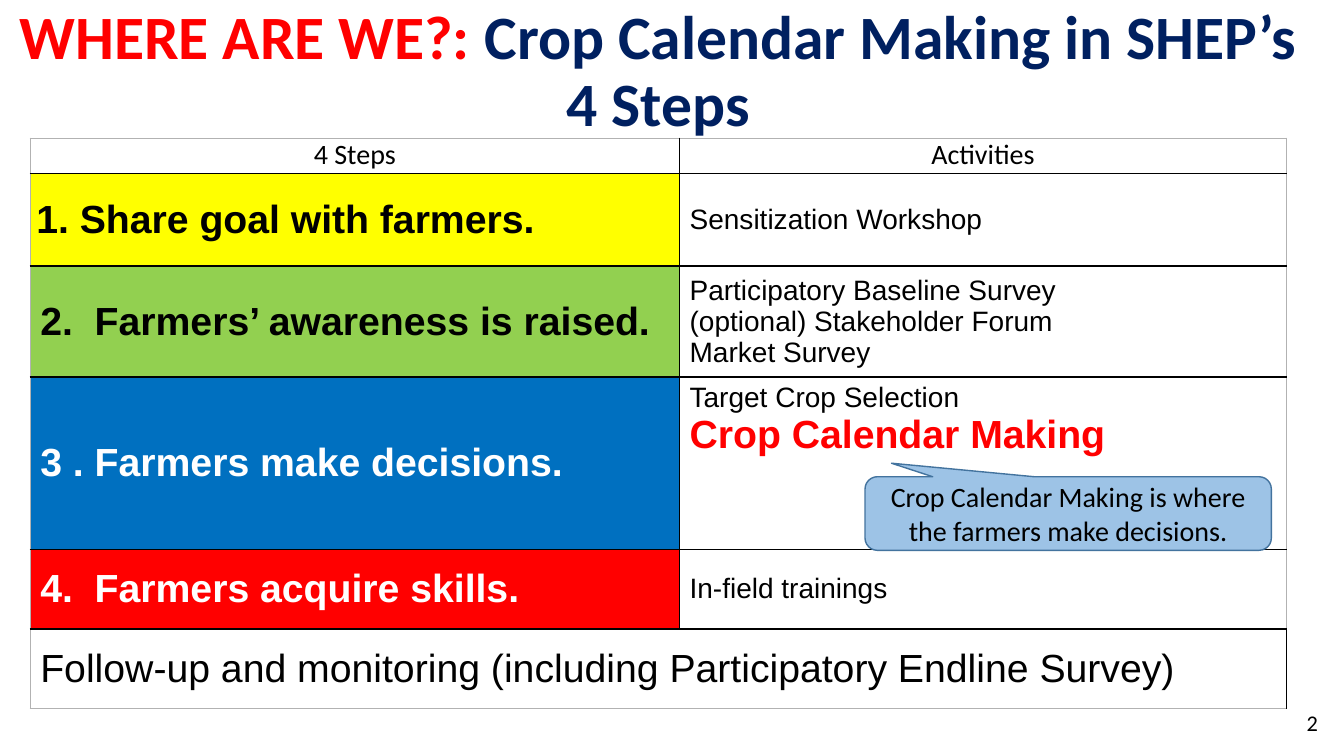
"""Builds the slide that places crop calendar making in the four steps."""
from lxml import etree
from pptx import Presentation
from pptx.dml.color import RGBColor
from pptx.enum.shapes import MSO_SHAPE
from pptx.enum.text import MSO_ANCHOR, PP_ALIGN
from pptx.oxml.ns import qn
from pptx.util import Inches, Pt

CALLOUT = MSO_SHAPE.ROUNDED_RECTANGULAR_CALLOUT
TOP, MIDDLE = MSO_ANCHOR.TOP, MSO_ANCHOR.MIDDLE
LEFT, CENTER, RIGHT = PP_ALIGN.LEFT, PP_ALIGN.CENTER, PP_ALIGN.RIGHT
BLACK, WHITE, RED, GREY = "000000", "FFFFFF", "FF0000", "B2B2B2"


def rgb(value):
    return RGBColor.from_string(value)


def style(item, size, color=BLACK, bold=False, face="Arial"):
    item.font.name = face
    item.font.size = Pt(size)
    item.font.bold = bold
    item.font.color.rgb = rgb(color)


deck = Presentation()
deck.slide_width, deck.slide_height = Inches(13.33), Inches(7.5)
slide = deck.slides.add_slide(deck.slide_layouts[6])

title = slide.shapes.add_textbox(0, 0, Inches(13.06), Inches(1.45)).text_frame
title.word_wrap = True
title.vertical_anchor = MIDDLE
heading = title.paragraphs[0]
heading.alignment = CENTER
heading.line_spacing = 0.9
for words, color in [("WHERE ARE WE?: ", RED),
                     ("Crop Calendar Making in SHEP’s 4 Steps", "002060")]:
    run = heading.add_run()
    run.text = words
    style(run, 44, color, True, "Calibri")

number = slide.shapes.add_textbox(Inches(10.17), Inches(6.97), Inches(3), Inches(0.4)).text_frame
number.word_wrap = True
number.vertical_anchor = MIDDLE
number.paragraphs[0].text = "2"
number.paragraphs[0].alignment = RIGHT
style(number.paragraphs[0], 16, face="Calibri")

steps = [
    (0.35, "4 Steps", None, BLACK, ["Activities"]),
    (0.92, "1. Share goal with farmers.", "FFFF00", BLACK, ["Sensitization Workshop"]),
    (1.03, "2.  Farmers’ awareness is raised.", "92D050", BLACK,
     ["Participatory Baseline Survey", "(optional) Stakeholder Forum", "Market Survey"]),
    (1.71, "3 . Farmers make decisions.", "0070C0", WHITE,
     ["Target Crop Selection", "Crop Calendar Making"]),
    (0.79, "4.  Farmers acquire skills.", RED, WHITE, ["In-field trainings"]),
    (0.79, "Follow-up and monitoring (including Participatory Endline Survey)",
     None, BLACK, []),
]
header, decision, follow_up = 0, 3, len(steps) - 1
table = slide.shapes.add_table(len(steps), 2, Inches(0.3), Inches(1.37),
                               Inches(12.46), Inches(5.59)).table
table.first_row = table.horz_banding = False
table.columns[0].width, table.columns[1].width = Inches(6.44), Inches(6.02)
table.cell(follow_up, 0).merge(table.cell(follow_up, 1))

for row, (height, step, fill, color, activities) in enumerate(steps):
    table.rows[row].height = Inches(height)
    for column, lines in enumerate([[step], activities]):
        cell = table.cell(row, column)
        if lines:
            cell.text = "\n".join(lines)
        cell.vertical_anchor = MIDDLE
        if row == header or (row == decision and column == 1):
            cell.vertical_anchor = TOP
        if row == header or (row == 1 and column == 0):
            cell.margin_left = cell.margin_right = Inches(0.06)
            cell.margin_top = cell.margin_bottom = 0
        for paragraph in cell.text_frame.paragraphs:
            paragraph.alignment = CENTER if row == header else LEFT
            if row == header:
                style(paragraph, 20, face="Calibri")
            elif column == 0:
                style(paragraph, 28, color, row != follow_up)
            elif paragraph.text == "Crop Calendar Making":
                style(paragraph, 28, RED, True)
            else:
                style(paragraph, 20)
        if fill and column == 0:
            cell.fill.solid()
            cell.fill.fore_color.rgb = rgb(fill)
        else:
            cell.fill.background()
        outer_edges = [column == 0, column == 1, row == header, row == follow_up]
        properties = cell._tc.get_or_add_tcPr()
        for order, (side, outer) in enumerate(zip("LRTB", outer_edges)):
            border = etree.Element(qn("a:ln" + side), w=str(Pt(1)))
            paint = etree.SubElement(border, qn("a:solidFill"))
            etree.SubElement(paint, qn("a:srgbClr"), val=GREY if outer else BLACK)
            properties.insert(order, border)

callout = slide.shapes.add_shape(CALLOUT, Inches(8.58), Inches(4.73), Inches(4.03), Inches(0.73))
callout.shadow.inherit = False
for index, value in enumerate([-0.435, -0.684, 0.167]):
    callout.adjustments[index] = value
callout.fill.solid()
callout.fill.fore_color.rgb = rgb("9DC3E6")
callout.line.color.rgb = rgb("43739E")
callout.line.width = Pt(1)
callout.text_frame.word_wrap = True
callout.text_frame.vertical_anchor = MIDDLE
message = callout.text_frame.paragraphs[0]
message.text = "Crop Calendar Making is where the farmers make decisions."
message.alignment = CENTER
style(message, 20, face="Calibri")

deck.save("out.pptx")
